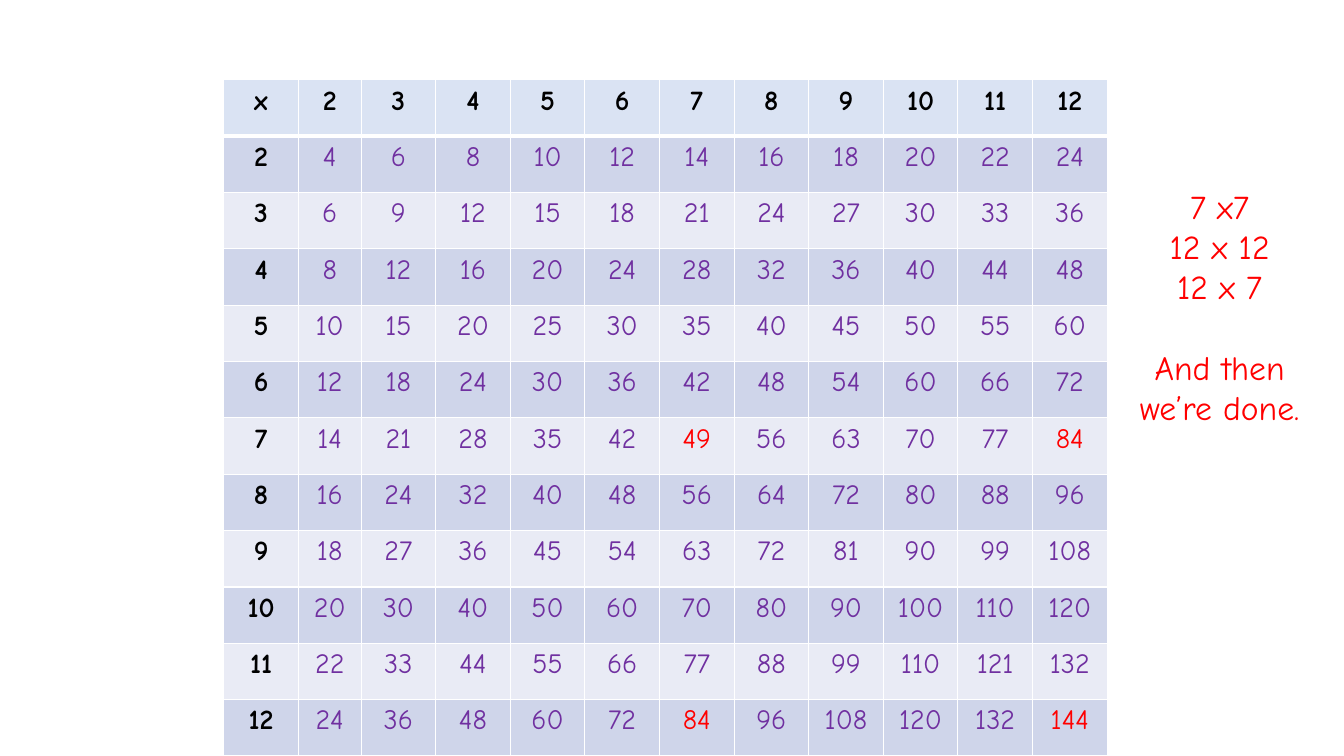
from dataclasses import dataclass

from lxml import etree
from pptx import Presentation
from pptx import util as u
from pptx.dml.color import RGBColor
from pptx.enum import text
from pptx.oxml.ns import qn


@dataclass(frozen=True)
class Theme:
    font: str = "Comic Neue"
    cell_size: int = 20
    note_size: int = 24
    line_gap: int = 29
    heading: str = "000000"
    product: str = "7030A0"
    highlight: str = "FF0000"
    header_fill: str = "DAE3F3"
    bands: tuple = ("E9EBF5", "CFD5EA")
    border: str = "FFFFFF"
    thin: int = 1
    thick: int = 3


THEME = Theme()
FACTORS = range(2, 13)
REMAINING = {7, 12}
NOTE_LINES = ["7 x7", "12 x 12", "12 x 7", "And then we’re done."]


def add_span(para, words, size, color, bold=False):
    para.alignment = text.PP_ALIGN.CENTER
    span = para.add_run()
    span.text = words
    span.font.name = THEME.font
    span.font.size = u.Pt(size)
    span.font.bold = bold
    span.font.color.rgb = RGBColor.from_string(color)


def set_borders(cell, top, bottom):
    properties = cell._tc.get_or_add_tcPr()
    widths = {"a:lnL": THEME.thin, "a:lnR": THEME.thin, "a:lnT": top, "a:lnB": bottom}
    for tag, width in widths.items():
        line = etree.SubElement(properties, qn(tag), w=str(u.Pt(width)))
        fill = etree.SubElement(line, qn("a:solidFill"))
        etree.SubElement(fill, qn("a:srgbClr"), val=THEME.border)


def style_cell(cell, words, color, bold, fill, top, bottom):
    set_borders(cell, top, bottom)
    cell.fill.solid()
    cell.fill.fore_color.rgb = RGBColor.from_string(fill)
    add_span(cell.text_frame.paragraphs[0], words, THEME.cell_size, color, bold)


def add_times_table(page):
    count = len(FACTORS) + 1
    frame = page.shapes.add_table(
        count, count, u.Cm(5.64), u.Cm(2.01), u.Cm(22.26), u.Cm(17.04))
    table = frame.table
    for column in table.columns:
        column.width = u.Cm(1.88)
    table.columns[1].width = u.Cm(1.58)
    for row in table.rows:
        row.height = u.Cm(1.42)

    # None stands for the heading row or column
    labels = [None, *FACTORS]
    for r, left in enumerate(labels):
        fill = THEME.bands[r % 2] if left else THEME.header_fill
        top = THEME.thick if r == 1 else THEME.thin
        bottom = THEME.thick if r == 0 else THEME.thin
        for c, right in enumerate(labels):
            if left and right:
                words, bold = str(left * right), False
                remains = {left, right} <= REMAINING
                color = THEME.highlight if remains else THEME.product
            else:
                words, bold, color = str(left or right or "x"), True, THEME.heading
            style_cell(table.cell(r, c), words, color, bold, fill, top, bottom)


def add_note(page):
    box = page.shapes.add_textbox(u.Cm(28.22), u.Cm(4.55), u.Cm(5.03), u.Cm(6.4))
    frame = box.text_frame
    frame.word_wrap = True
    for index, words in enumerate(NOTE_LINES):
        para = frame.add_paragraph() if index else frame.paragraphs[0]
        add_span(para, words, THEME.note_size, THEME.highlight)
    para.space_before = u.Pt(THEME.line_gap)


def main():
    deck = Presentation()
    deck.slide_width, deck.slide_height = u.Cm(33.87), u.Cm(19.05)
    # Blank layout, as the slide has no title
    page = deck.slides.add_slide(deck.slide_layouts[6])
    add_times_table(page)
    add_note(page)
    deck.save("out.pptx")


if __name__ == "__main__":
    main()
